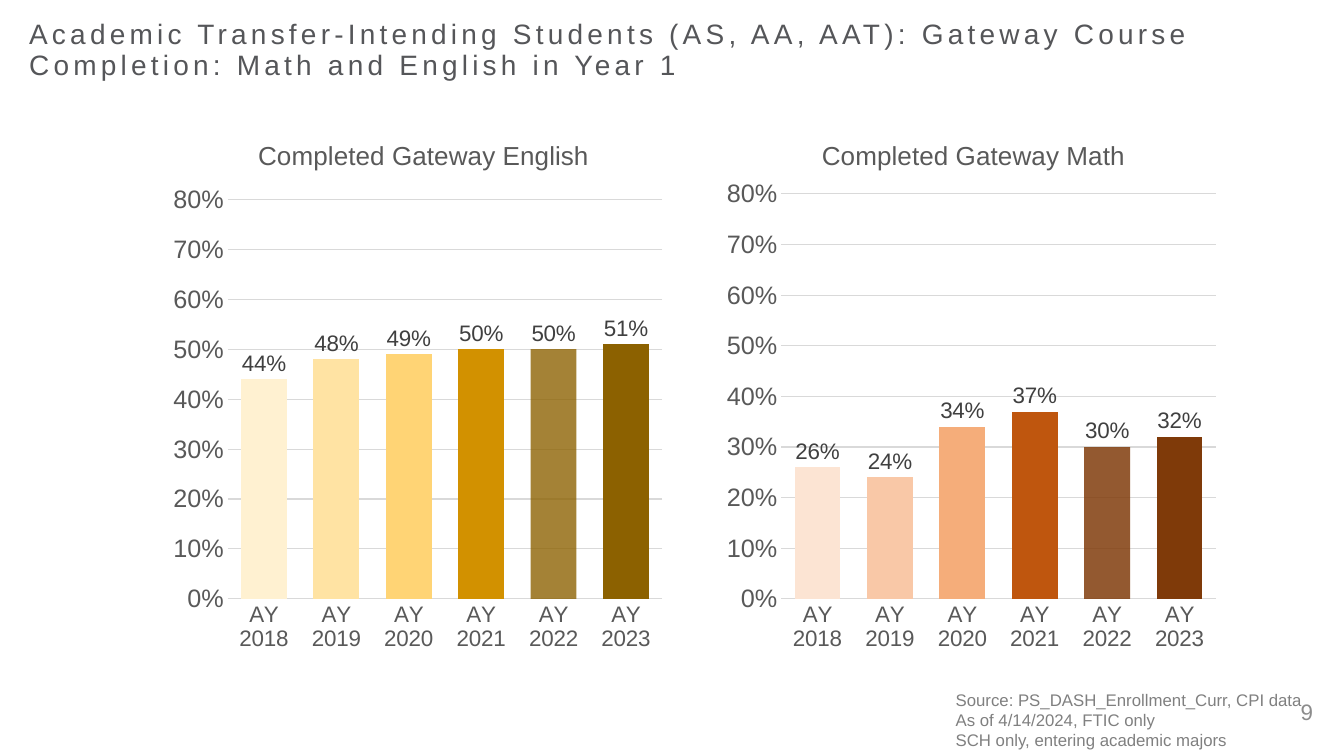
from lxml import etree
from pptx import Presentation
from pptx.chart.data import CategoryChartData
from pptx.dml.color import RGBColor
from pptx.enum.chart import XL_CHART_TYPE as CT, XL_LABEL_POSITION as LP, XL_TICK_MARK as TM
from pptx.enum.text import MSO_ANCHOR, PP_ALIGN
from pptx.oxml.ns import qn
from pptx.util import Inches, Pt

FONT = "Arial"
BLACK = RGBColor(0x00, 0x00, 0x00)
LABEL = RGBColor(0x40, 0x40, 0x40)
AXIS = RGBColor(0x59, 0x59, 0x59)
TITLE = RGBColor(0x55, 0x56, 0x59)
SOURCE = RGBColor(0x80, 0x80, 0x80)
NUMBER = RGBColor(0x8C, 0x8C, 0x8C)
GRID = RGBColor(0xD9, 0xD9, 0xD9)
GOLDS = [RGBColor.from_string(c) for c in
         ("FFF1D1", "FFE3A3", "FFD475", "D29100", "8C6100", "8C6100")]
ORANGES = [RGBColor.from_string(c) for c in
           ("FCE4D3", "F9C8A7", "F5AD7A", "BF560E", "7F3A09", "7F3A09")]
YEARS = [f"AY {year}" for year in range(2018, 2024)]
FADED = YEARS.index("AY 2022")


def set_font(font, size, color):
    font.name, font.size, font.bold = FONT, Pt(size), False
    font.color.rgb = color


def set_layout(parent, index, **places):
    for old in parent.findall(qn("c:layout")):
        parent.remove(old)
    layout = etree.Element(qn("c:layout"))
    manual = etree.SubElement(layout, qn("c:manualLayout"))
    for tag, value in places.items():
        etree.SubElement(manual, qn(f"c:{tag}")).set("val", str(value))
    parent.insert(index, layout)


class SlideBuilder:
    def __init__(self, slide):
        self.s = slide

    def text(self, box, lines, size, color, align=PP_ALIGN.LEFT,
             anchor=MSO_ANCHOR.TOP, line_spacing=None, tracking=None):
        tf = self.s.shapes.add_textbox(*map(Inches, box)).text_frame
        tf.word_wrap = True
        tf.vertical_anchor = anchor
        tf.text = "\n".join(lines)
        for p in tf.paragraphs:
            p.alignment = align
            p.line_spacing = line_spacing
            set_font(p.font, size, color)
            if tracking:
                for r in p.runs:
                    r.font._element.set("spc", str(tracking * 100))

    def column_chart(self, left, title, values, colors, alpha, title_at, plot_at):
        data = CategoryChartData(number_format="0%")
        data.categories = YEARS
        data.add_series("Series 1", values)
        chart = self.s.shapes.add_chart(
            CT.COLUMN_CLUSTERED, Inches(left), Inches(1.11), Inches(5.07), Inches(5.43), data).chart
        set_font(chart.font, 10, BLACK)
        chart.has_legend = False
        self.chart_title(chart, title, title_at)
        x, y, w, h = plot_at
        set_layout(chart._chartSpace.chart.plotArea, 0, layoutTarget="inner",
                   xMode="edge", yMode="edge", x=x, y=y, w=w, h=h)
        self.axes(chart)
        self.columns(chart.plots[0], colors, alpha)

    def chart_title(self, chart, title, at):
        chart.has_title = True
        p = chart.chart_title.text_frame.paragraphs[0]
        p.text = title
        set_font(p.font, 18.6, AXIS)
        set_layout(chart.chart_title._element, 1, xMode="edge", yMode="edge", x=at[0], y=at[1])

    def axes(self, chart):
        cat, val = chart.category_axis, chart.value_axis
        for axis, size in ((cat, 16), (val, 18)):
            axis.major_tick_mark = axis.minor_tick_mark = TM.NONE
            set_font(axis.tick_labels.font, size, AXIS)
        val.minimum_scale, val.maximum_scale, val.major_unit = 0, 0.8, 0.1
        val.tick_labels.number_format = "0%"
        val.tick_labels.number_format_is_linked = False
        val.format.line.fill.background()
        for line in (cat.format.line, val.major_gridlines.format.line):
            line.color.rgb = GRID
            line.width = Pt(0.75)

    def columns(self, plot, colors, alpha):
        plot.gap_width, plot.overlap = 58, -27
        plot.vary_by_categories = False
        series = plot.series[0]
        series.invert_if_negative = False
        for i, color in enumerate(colors):
            fill = series.points[i].format.fill
            fill.solid()
            fill.fore_color.rgb = color
            if i == FADED:
                rgb = fill._xPr.find(".//" + qn("a:srgbClr"))
                etree.SubElement(rgb, qn("a:alpha")).set("val", str(alpha * 1000))
        labels = series.data_labels
        labels.show_value = True
        labels.position = LP.OUTSIDE_END
        labels.number_format = "0%"
        labels.number_format_is_linked = False
        set_font(labels.font, 16, LABEL)


def main():
    prs = Presentation()
    prs.slide_width, prs.slide_height = Inches(13.33), Inches(7.5)
    b = SlideBuilder(prs.slides.add_slide(prs.slide_layouts[6]))
    b.text((12.5, 6.79, 0.62, 0.45), ["9"], 16, NUMBER, PP_ALIGN.RIGHT, MSO_ANCHOR.BOTTOM)
    b.column_chart(7.09, "Completed Gateway Math", (0.26, 0.24, 0.34, 0.37, 0.3, 0.32),
                   ORANGES, 84, (0.2, 0.04), (0.13, 0.15, 0.85, 0.74))
    b.text((0.19, 0.17, 12.31, 0.67),
           ["Academic Transfer-Intending Students (AS, AA, AAT): Gateway Course "
            "Completion: Math and English in Year 1"],
           20, TITLE, anchor=MSO_ANCHOR.MIDDLE, line_spacing=0.9, tracking=3)
    b.text((9.38, 6.79, 5.56, 0.71),
           ["Source: PS_DASH_Enrollment_Curr, CPI data", "As of 4/14/2024, FTIC only",
            "SCH only, entering academic majors"], 12, SOURCE)
    b.column_chart(1.6, "Completed Gateway English", (0.44, 0.48, 0.49, 0.5, 0.5, 0.51),
                   GOLDS, 79, (0.18, 0.04), (0.13, 0.16, 0.85, 0.73))
    prs.save("out.pptx")


if __name__ == "__main__":
    main()
